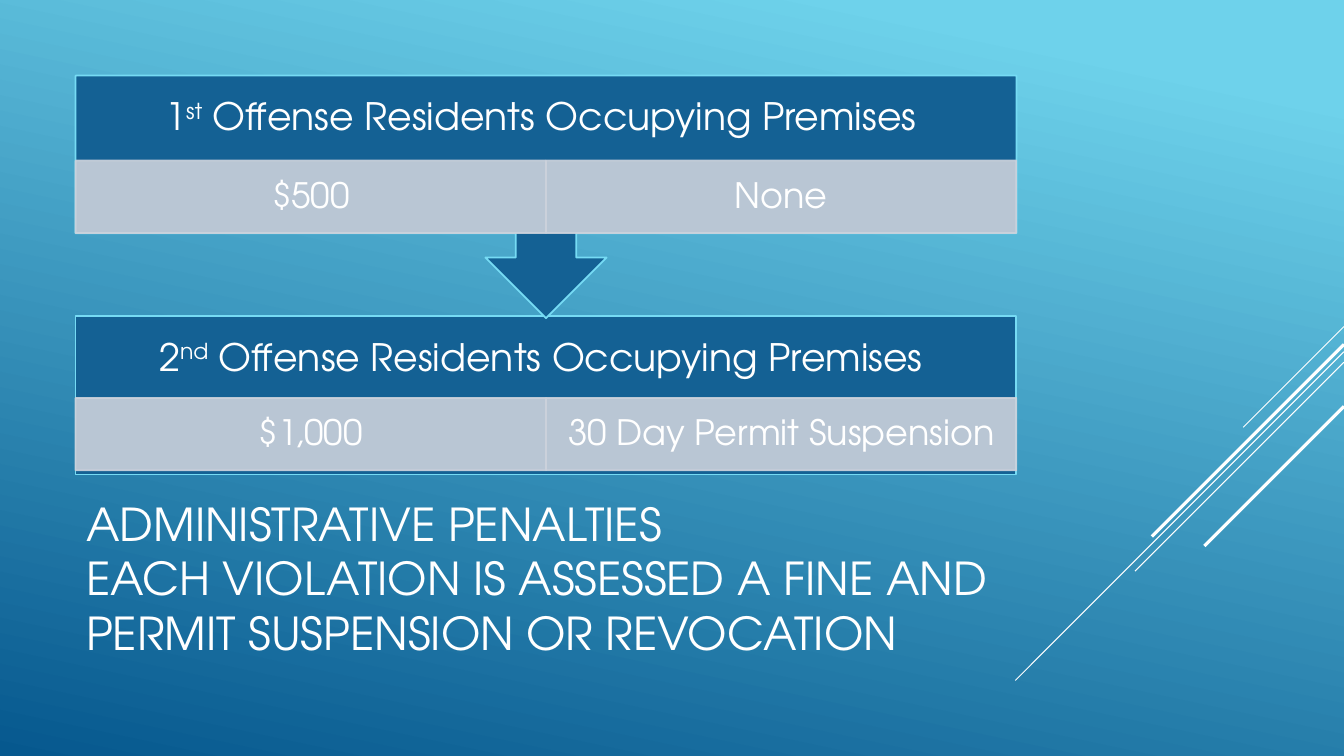
from lxml import etree
from pptx import Presentation
from pptx import util as u
from pptx.dml.color import RGBColor
from pptx.enum import shapes, text
from pptx.oxml.ns import qn

PX = 9525  # EMU, 96 px to the inch
FONT = "TeX Gyre Adventor"
COLORS = {
    "sky": "6ED2EB",
    "deep": "06588E",
    "box": "146194",
    "edge": "76DBF4",
    "cell": "CCD2DC",
    "white": "FFFFFF",
}


def px(*lengths):
    return [u.Emu(n * PX) for n in lengths]


def rgb(name):
    return RGBColor.from_string(COLORS[name])


def write(sp, runs, size, align=text.PP_ALIGN.CENTER, spacing=None, insets=(10, 5)):
    """Write (text, baseline) runs, with line breaks at newlines."""
    tf = sp.text_frame
    tf.word_wrap = True
    tf.vertical_anchor = text.MSO_ANCHOR.MIDDLE
    tf.margin_left = tf.margin_right = u.Emu(insets[0] * PX)
    tf.margin_top = tf.margin_bottom = u.Emu(insets[1] * PX)
    p = tf.paragraphs[0]
    p.alignment = align
    p.line_spacing = spacing
    for words, baseline in runs:
        for i, line in enumerate(words.split("\n")):
            if i:
                p.add_line_break()
            r = p.add_run()
            r.text = line
            r.font.size = u.Pt(size)
            r.font.name = FONT
            r.font.color.rgb = rgb("white")
            if baseline:
                r.font._element.set("baseline", str(baseline * 1000))


def set_alpha(sp, percent):
    for color in sp._element.spPr.iter(qn("a:srgbClr")):
        etree.SubElement(color, qn("a:alpha")).set("val", str(percent * 1000))


def add_box(slide, kind, box, fill, line):
    sp = slide.shapes.add_shape(kind, *px(*box))
    sp.shadow.inherit = False
    sp.fill.solid()
    sp.fill.fore_color.rgb = rgb(fill)
    sp.line.color.rgb = rgb(line)
    sp.line.width = u.Pt(1.25)
    return sp


def add_background(slide):
    fill = slide.background.fill
    fill.gradient()
    fill.gradient_angle = 258
    for stop, name, position in zip(fill.gradient_stops, ("sky", "deep"), (0.1, 1)):
        stop.color.rgb = rgb(name)
        stop.position = position


def add_diagonals(slide, right):
    """Draw 45 degree lines down and left from the right edge."""
    for top, reach, width in [(311, 96, 0.75), (335, 313, 0.75), (345, 199, 0.75),
                              (328, 183, 2.25), (387, 133, 2.25)]:
        line = slide.shapes.add_connector(
            shapes.MSO_CONNECTOR.STRAIGHT, *px(right, top, right - reach, top + reach))
        line.line.color.rgb = rgb("white")
        line.line.width = u.Pt(width)
        etree.SubElement(line._element.spPr, qn("a:effectLst"))


def add_offense(slide, kind, box, cell_offset, number, suffix, penalties):
    """Draw an offense heading above a row of penalty cells."""
    left, top, width, height = box
    frame = add_box(slide, kind, box, "box", "edge")
    if kind == shapes.MSO_SHAPE.UP_ARROW_CALLOUT:
        frame.rotation = 180
    heading = slide.shapes.add_textbox(*px(left, top, width, 82))
    write(heading,
          [(number, 0), (suffix, 30), (" Offense Residents Occupying Premises ", 0)],
          27, spacing=0.9, insets=(20, 20))
    cell_width = width // len(penalties)
    for i, penalty in enumerate(penalties):
        cell = add_box(slide, shapes.MSO_SHAPE.RECTANGLE,
                       (left + i * cell_width, top + cell_offset, cell_width, 69),
                       "cell", "cell")
        set_alpha(cell, 90)
        write(cell, [(penalty, 0)], 25, spacing=0.9, insets=(18, 3))


def add_title(slide, box):
    title = slide.shapes.add_textbox(*px(*box))
    write(title,
          [("ADMINISTRATIVE PENALTIES\nEACH VIOLATION IS ASSESSED A FINE AND "
            "PERMIT SUSPENSION OR REVOCATION", 0)],
          32.4, align=text.PP_ALIGN.LEFT)


def main():
    prs = Presentation()
    prs.slide_width, prs.slide_height = px(1280, 720)
    slide = prs.slides.add_slide(prs.slide_layouts[6])
    add_background(slide)
    add_diagonals(slide, 1280)
    add_title(slide, (72, 471, 896, 158))
    add_offense(slide, shapes.MSO_SHAPE.RECTANGLE, (72, 301, 896, 151), 78,
                "2", "nd", ["$1,000", "30 Day Permit Suspension"])
    add_offense(slide, shapes.MSO_SHAPE.UP_ARROW_CALLOUT, (72, 72, 896, 231), 81,
                "1", "st", ["$500", "None"])
    prs.save("out.pptx")


if __name__ == "__main__":
    main()
